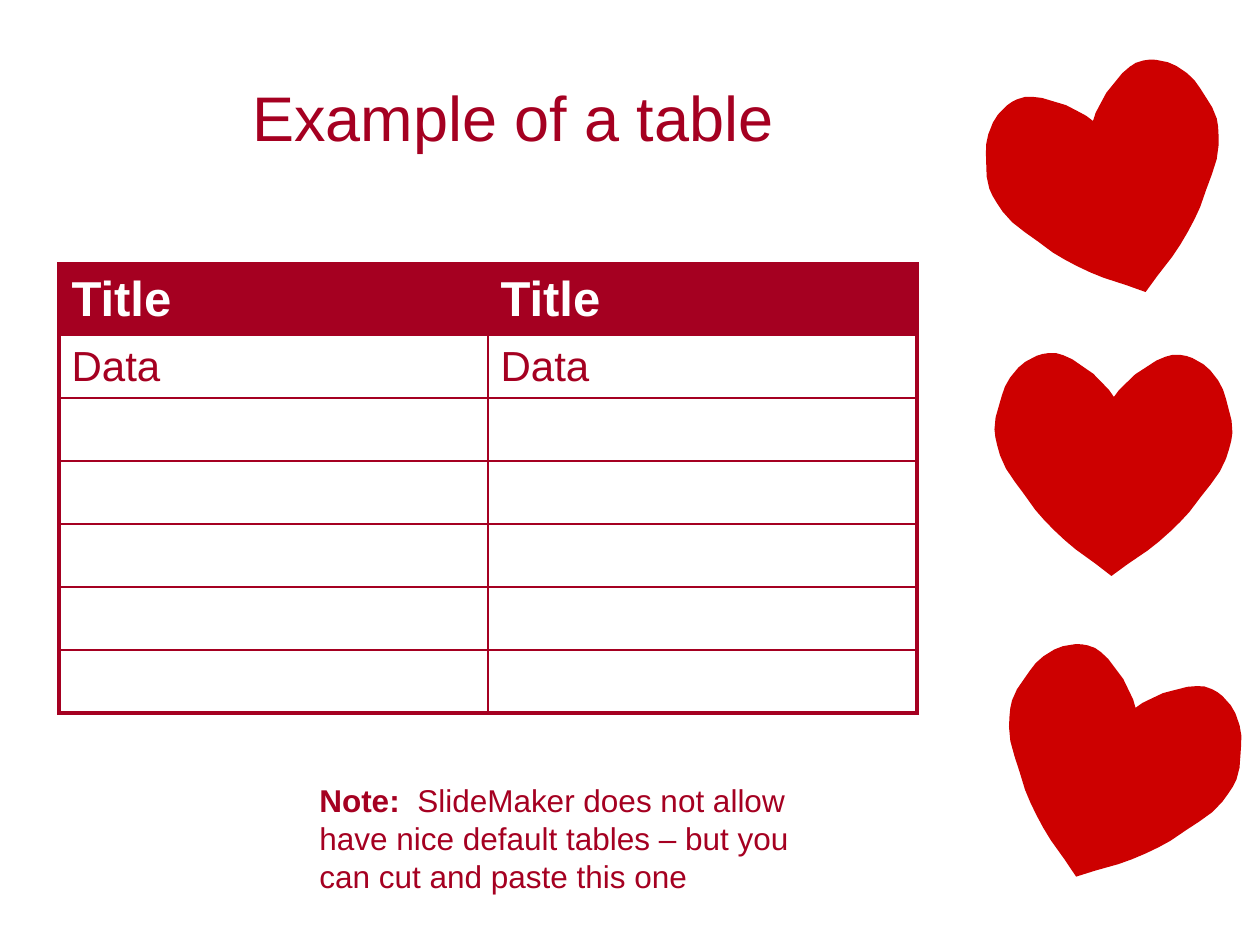
"""Build the table example slide with a column of hearts."""
from pptx import Presentation
from pptx import util as u
from pptx.dml.color import RGBColor
from pptx.enum import text
from pptx.oxml import parse_xml
from pptx.oxml.ns import nsdecls

CRIMSON = RGBColor(0xA5, 0x00, 0x21)
HEART_RED = RGBColor(0xCD, 0x00, 0x00)
WHITE = RGBColor(0xFF, 0xFF, 0xFF)
PX = 914400 / 126


def px(length):
    return u.Emu(round(length * PX))


def write(paragraph, content, size, color=CRIMSON, bold=False):
    run = paragraph.add_run()
    run.text = content
    run.font.name = "Arial"
    run.font.size = u.Pt(size)
    run.font.bold = bold
    run.font.color.rgb = color


presentation = Presentation()
presentation.slide_width, presentation.slide_height = px(1260), px(945)
slide = presentation.slides.add_slide(presentation.slide_layouts[5])

right_half = [
    (0, -68), (5, -75), (11, -81), (21, -91), (27, -95), (42, -105), (51, -109),
    (58, -111), (66, -111), (72, -110), (78, -108), (89, -102), (96, -96), (104, -86),
    (109, -77), (112, -68), (115, -57), (118, -46), (119, -34), (118, -26), (116, -18),
    (113, -8), (107, 5), (98, 18), (88, 31), (77, 46), (68, 56), (58, 66), (47, 76),
    (36, 85), (16, 99), (0, 111),
]
left_half = [(-x, y) for x, y in reversed(right_half[1:-1])]
outline = right_half + left_half
for center_y, rotation in [(465, 0.8), (186, 342.9), (772, 19.4)]:
    builder = slide.shapes.build_freeform(*outline[0], scale=PX)
    builder.add_line_segments(outline[1:], close=True)
    heart = builder.convert_to_shape(px(1113), px(center_y))
    heart.rotation = rotation
    heart.shadow.inherit = False
    heart.fill.solid()
    heart.fill.fore_color.rgb = HEART_RED
    heart.line.fill.background()

title = slide.shapes.title
title.left, title.top, title.width, title.height = px(63), px(38), px(900), px(157)
title.text_frame.vertical_anchor = text.MSO_ANCHOR.MIDDLE
title_paragraph = title.text_frame.paragraphs[0]
title_paragraph.alignment = text.PP_ALIGN.CENTER
write(title_paragraph, "Example of a table", 36)

row_heights = [71] + [63] * 6
row_texts = ["Title", "Data"] + [""] * 5
last_row = len(row_heights) - 1
table = slide.shapes.add_table(
    len(row_heights), 2, px(59), px(264), px(858), px(sum(row_heights))
).table
table.horz_banding = False
for column in table.columns:
    column.width = px(429)
for row_index, (height, content) in enumerate(zip(row_heights, row_texts)):
    table.rows[row_index].height = px(height)
    is_header = row_index == 0
    for column_index in range(2):
        cell = table.cell(row_index, column_index)
        cell.vertical_anchor = text.MSO_ANCHOR.MIDDLE
        cell.fill.solid()
        cell.fill.fore_color.rgb = CRIMSON if is_header else WHITE
        if content:
            write(
                cell.text_frame.paragraphs[0],
                content,
                28 if is_header else 24,
                color=WHITE if is_header else CRIMSON,
                bold=is_header,
            )
        outer_edges = {
            "L": column_index == 0,
            "R": column_index == 1,
            "T": is_header,
            "B": row_index == last_row,
        }
        properties = cell._tc.get_or_add_tcPr()
        for position, (side, outer) in enumerate(outer_edges.items()):
            width = u.Pt(2.25 if outer else 1)
            border = parse_xml(
                f'<a:ln{side} {nsdecls("a")} w="{width}"><a:solidFill>'
                f'<a:srgbClr val="{CRIMSON}"/></a:solidFill></a:ln{side}>'
            )
            properties.insert(position, border)

note = slide.shapes.add_textbox(px(307), px(775), px(530), px(126))
note.text_frame.word_wrap = True
note_paragraph = note.text_frame.paragraphs[0]
write(note_paragraph, "Note:  ", 18, bold=True)
write(
    note_paragraph,
    "SlideMaker does not allow have nice default tables – but you can cut and paste this one",
    18,
)

presentation.save("out.pptx")
